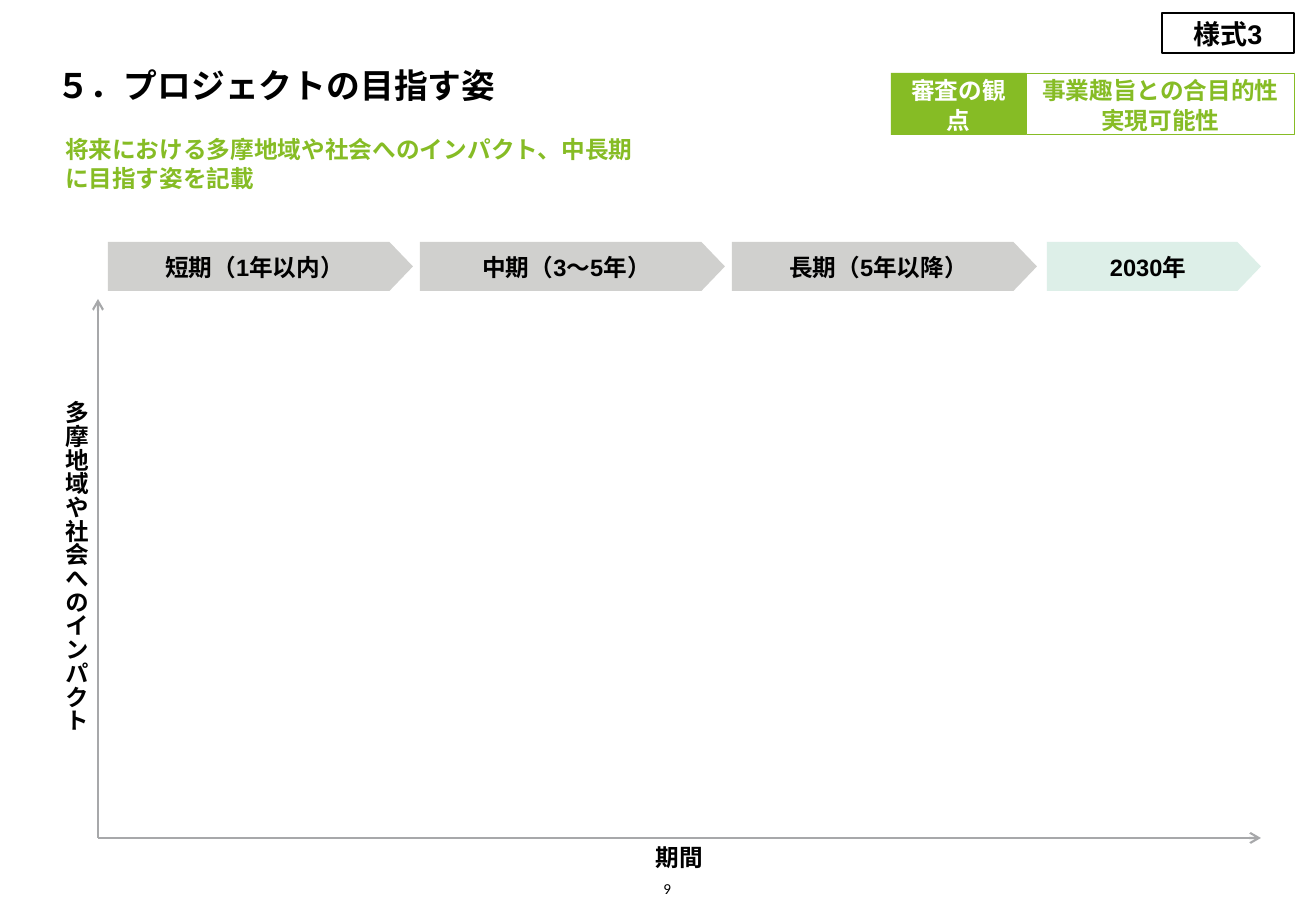
from pptx import Presentation
from pptx.dml.color import RGBColor
from pptx.enum.shapes import MSO_CONNECTOR, MSO_SHAPE
from pptx.enum.text import MSO_ANCHOR, PP_ALIGN
from pptx.oxml.ns import qn
from pptx.util import Pt
from lxml import etree

RECTANGLE, PENTAGON = MSO_SHAPE.RECTANGLE, MSO_SHAPE.PENTAGON
STRAIGHT = MSO_CONNECTOR.STRAIGHT
LEFT, CENTER, RIGHT = PP_ALIGN.LEFT, PP_ALIGN.CENTER, PP_ALIGN.RIGHT
MIDDLE, BOTTOM = MSO_ANCHOR.MIDDLE, MSO_ANCHOR.BOTTOM

EMU_PER_PX = 7526
BLACK, WHITE, GREEN = "000000", "FFFFFF", "86BC25"
GRAY, MINT, AXIS_GRAY = "D0D0CE", "DDEFE8", "A7A8AA"

# Content
FORM_LABEL = "様式3"
TITLE = "５．プロジェクトの目指す姿"
GUIDANCE = "将来における多摩地域や社会へのインパクト、中長期に目指す姿を記載"
CRITERIA_LABEL = "審査の観点"
CRITERIA = "事業趣旨との合目的性\n実現可能性"
PERIODS = ["短期（1年以内）", "中期（3～5年）", "長期（5年以降）"]
GOAL = "2030年"
IMPACT_AXIS = "多摩地域や社会へのインパクト"
TIME_AXIS = "期間"
PAGE_NUMBER = "9"

# Layout in px
PERIOD_LEFT, PERIOD_STEP, PERIOD_WIDTH = 108, 312, 305
GOAL_LEFT, GOAL_WIDTH = 1047, 214
ARROW_TOP, ARROW_HEIGHT = 242, 49
ORIGIN = (98, 838)
TIME_END, IMPACT_END = (1261, 838), (98, 299)


def px(value):
    return round(value * EMU_PER_PX)


def color(hex_string):
    return RGBColor.from_string(hex_string)


def write(shape, text, size, font_name, font_color=BLACK, bold=True, align=CENTER,
          anchor=MIDDLE, margins=(0, 0, 0, 0), wrap=True, line_spacing=None):
    frame = shape.text_frame
    frame.word_wrap = wrap
    frame.vertical_anchor = anchor
    (frame.margin_left, frame.margin_top,
     frame.margin_right, frame.margin_bottom) = map(px, margins)
    paragraph = frame.paragraphs[0]
    paragraph.text = text
    paragraph.alignment = align
    paragraph.line_spacing = line_spacing
    for run in paragraph.runs:
        run.font.size = Pt(size)
        run.font.name = font_name
        run.font.bold = bold
        run.font.color.rgb = color(font_color)


def add_text(box, text, size, font_name, **options):
    shape = slide.shapes.add_textbox(*map(px, box))
    write(shape, text, size, font_name, **options)
    return shape


def add_label(kind, box, text, fill, line=None, line_width=0.5, size=14, font_color=BLACK):
    shape = slide.shapes.add_shape(kind, *map(px, box))
    shape.shadow.inherit = False
    shape.fill.solid()
    shape.fill.fore_color.rgb = color(fill)
    if line:
        shape.line.color.rgb = color(line)
        shape.line.width = Pt(line_width)
    else:
        shape.line.fill.background()
    write(shape, text, size, "Arial", font_color=font_color,
          margins=(10, 10, 10, 10), line_spacing=1.06)
    return shape


def add_axis(start, end):
    axis = slide.shapes.add_connector(STRAIGHT, *map(px, start + end))
    axis.line.color.rgb = color(AXIS_GRAY)
    axis.line.width = Pt(1.25)
    etree.SubElement(axis.line._get_or_add_ln(), qn("a:tailEnd"), type="arrow")
    etree.SubElement(axis.element.spPr, qn("a:effectLst"))


presentation = Presentation()
presentation.slide_width, presentation.slide_height = px(1316), px(911)
slide = presentation.slides.add_slide(presentation.slide_layouts[6])

# Heading and page number
add_text((646, 875, 25, 23), PAGE_NUMBER, 9, "Calibri", bold=False,
         align=RIGHT, anchor=BOTTOM, wrap=False)
add_label(RECTANGLE, (1162, 13, 132, 40), FORM_LABEL, WHITE, BLACK, 1.5, size=16)
add_text((56, 24, 1205, 81), TITLE, 20, "Calibri", align=LEFT, anchor=BOTTOM)
add_text((56, 135, 578, 57), GUIDANCE, 14, "Calibri", font_color=GREEN,
         align=LEFT, margins=(9, 0, 0, 0), wrap=False)

# Axes
add_text((646, 838, 67, 39), TIME_AXIS, 14, "Arial", margins=(5, 5, 5, 5))
add_axis(ORIGIN, TIME_END)
add_axis(ORIGIN, IMPACT_END)
impact_label = add_text((57, 396, 39, 344), IMPACT_AXIS, 14, "Arial",
                        margins=(5, 5, 5, 5), wrap=False)
impact_label.element.txBody.find(qn("a:bodyPr")).set("vert", "eaVert")

# Period arrows
arrows = [(text, PERIOD_LEFT + index * PERIOD_STEP, PERIOD_WIDTH, GRAY)
          for index, text in enumerate(PERIODS)]
arrows.append((GOAL, GOAL_LEFT, GOAL_WIDTH, MINT))
for text, left, width, fill in arrows:
    arrow = add_label(PENTAGON, (left, ARROW_TOP, width, ARROW_HEIGHT), text, fill)
    arrow.adjustments[0] = 0.48

# Review criteria
add_label(RECTANGLE, (1026, 73, 269, 62), CRITERIA, WHITE, GREEN, font_color=GREEN)
add_label(RECTANGLE, (891, 73, 135, 62), CRITERIA_LABEL, GREEN, GREEN, font_color=WHITE)

presentation.save("out.pptx")
